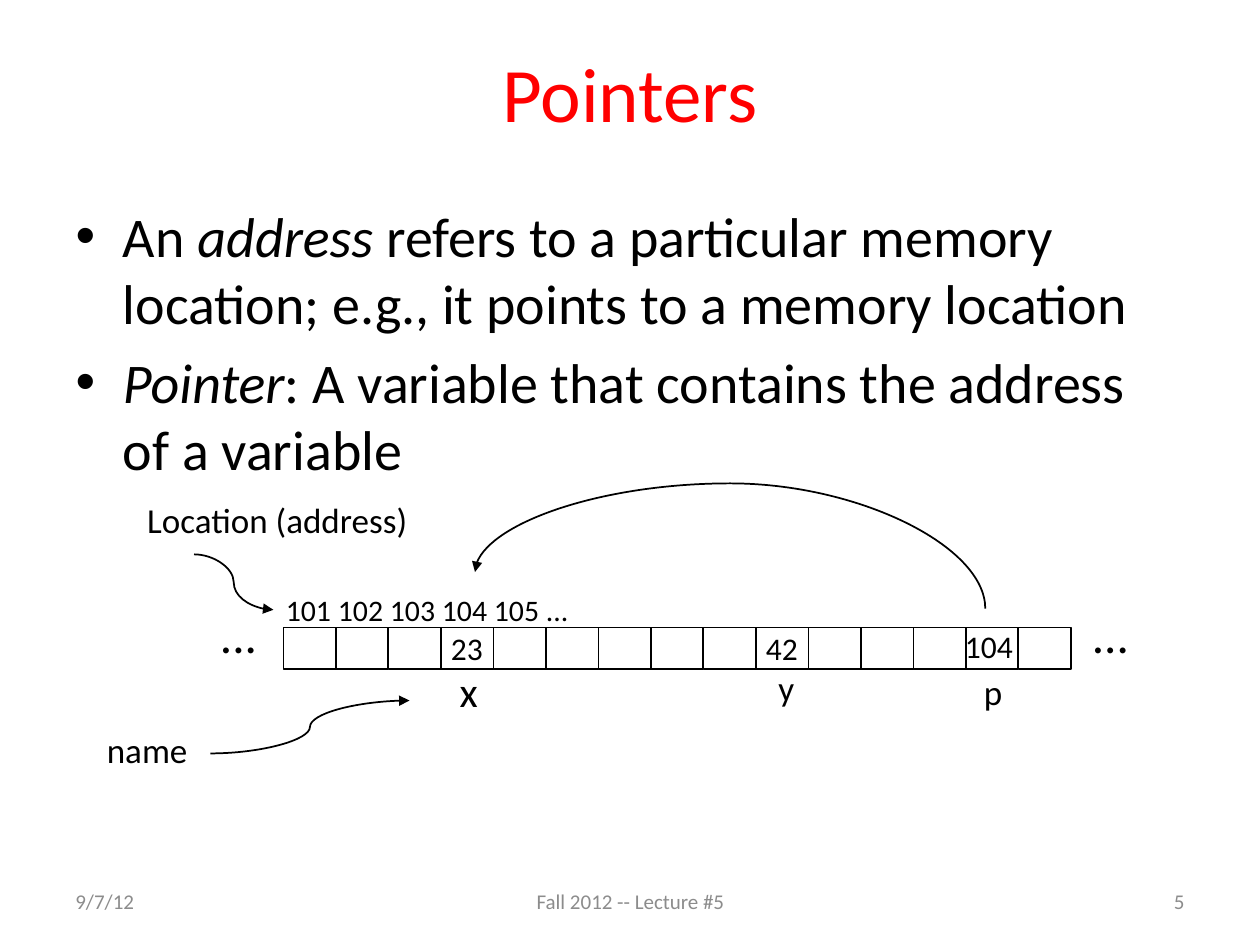
"""Build a lecture slide on pointers, with a row of memory cells."""
from dataclasses import dataclass

from lxml import etree
from pptx import Presentation
from pptx import util as u
from pptx.dml.color import RGBColor
from pptx.enum import shapes, text
from pptx.oxml import ns

BLACK = RGBColor(0x00, 0x00, 0x00)
RED = RGBColor(0xFF, 0x00, 0x00)
GRAY = RGBColor(0x8C, 0x8C, 0x8C)
FONT = "Calibri"
CELL_COUNT = 15
ROW_LEFT, ROW_RIGHT, ROW_TOP, CELL_HEIGHT = 2.25, 8.5, 4.98, 0.33


@dataclass
class Label:
    wording: str
    left: float
    top: float
    width: float
    height: float
    size: float = 20


@dataclass
class Footer:
    wording: str
    left: float
    width: float
    align: text.PP_ALIGN


@dataclass
class Arrow:
    begin: tuple[float, float]
    end: tuple[float, float]
    rotation: int = 0
    bend: float = 0.5


BULLETS = [
    [("An ", False), ("address ", True),
     ("refers to a particular memory location; e.g., it points to a memory location", False)],
    [("Pointer", True), (": A variable that contains the address of a variable", False)],
]
FOOTERS = [
    Footer("9/7/12", 0.5, 2.33, text.PP_ALIGN.LEFT),
    Footer("Fall 2012 -- Lecture #5", 3.42, 3.17, text.PP_ALIGN.CENTER),
    Footer("5", 7.17, 2.33, text.PP_ALIGN.RIGHT),
]
LABELS = [
    Label("23", 3.48, 4.94, 0.48, 0.4, 18),
    Label("42", 5.98, 4.94, 0.48, 0.4, 18),
    Label("104", 7.56, 4.93, 0.62, 0.4, 18),
    Label(" ...", 8.48, 4.75, 0.62, 0.57, 28),
    Label(" ...", 1.56, 4.75, 0.62, 0.57, 28),
    Label("101 102 103 104 105 ...", 2.17, 4.65, 2.47, 0.39, 17),
    Label("x", 3.55, 5.23, 0.37, 0.5, 24),
    Label("y", 6.08, 5.24, 0.34, 0.43),
    Label("p", 7.71, 5.27, 0.36, 0.43),
    Label("Location (address)", 1.07, 3.91, 2.5, 0.43),
    Label("name", 0.75, 5.73, 0.9, 0.43),
]
ARROWS = [
    Arrow((1.54, 4.4), (2.17, 4.84)),
    Arrow((1.67, 5.98), (3.25, 5.56)),
    Arrow((5.94, 2.66), (5.65, 6.71), rotation=90, bend=3.425),
]


def place(shape, left: float, top: float, width: float, height: float) -> None:
    shape.left, shape.top = u.Inches(left), u.Inches(top)
    shape.width, shape.height = u.Inches(width), u.Inches(height)


def style(font, size: float, color: RGBColor) -> None:
    font.name, font.size = FONT, u.Pt(size)
    font.color.rgb = color


def fill_title(title) -> None:
    place(title, 0.5, 0.1, 9, 1.25)
    title.text_frame.text = "Pointers"
    style(title.text_frame.paragraphs[0].runs[0].font, 44, RED)


def fill_body(body) -> None:
    place(body, 0.5, 1.55, 9, 4.95)
    frame = body.text_frame
    for index, bullet in enumerate(BULLETS):
        paragraph = frame.add_paragraph() if index else frame.paragraphs[0]
        for wording, italic in bullet:
            run = paragraph.add_run()
            run.text = wording
            run.font.italic = italic
            style(run.font, 32, BLACK)


def draw_footer(slide, footer: Footer) -> None:
    frame = slide.shapes.add_textbox(
        u.Inches(footer.left), u.Inches(6.95), u.Inches(footer.width), u.Inches(0.4)).text_frame
    frame.word_wrap = True
    frame.vertical_anchor = text.MSO_ANCHOR.MIDDLE
    frame.text = footer.wording
    frame.paragraphs[0].alignment = footer.align
    style(frame.paragraphs[0].runs[0].font, 12, GRAY)


def draw_cell(slide, index: int) -> None:
    width = (ROW_RIGHT - ROW_LEFT) / CELL_COUNT
    cell = slide.shapes.add_shape(
        shapes.MSO_SHAPE.RECTANGLE, u.Inches(ROW_LEFT + index * width), u.Inches(ROW_TOP),
        u.Inches(width), u.Inches(CELL_HEIGHT))
    cell.shadow.inherit = False
    cell.fill.background()
    cell.line.color.rgb = BLACK
    cell.line.width = u.Pt(1)


def draw_label(slide, label: Label) -> None:
    frame = slide.shapes.add_textbox(
        u.Inches(label.left), u.Inches(label.top),
        u.Inches(label.width), u.Inches(label.height)).text_frame
    frame.word_wrap = False
    frame.auto_size = text.MSO_AUTO_SIZE.SHAPE_TO_FIT_TEXT
    frame.text = label.wording
    style(frame.paragraphs[0].runs[0].font, label.size, BLACK)


def draw_arrow(slide, arrow: Arrow) -> None:
    points = [u.Inches(value) for value in (*arrow.begin, *arrow.end)]
    curve = slide.shapes.add_connector(shapes.MSO_CONNECTOR.CURVE, *points)
    curve.line.color.rgb = BLACK
    curve.line.width = u.Pt(1)
    properties = curve._element.spPr
    if arrow.rotation:
        properties.find(ns.qn("a:xfrm")).set("rot", str(arrow.rotation * 60000))
    adjustments = properties.find(ns.qn("a:prstGeom")).get_or_add_avLst()
    etree.SubElement(adjustments, ns.qn("a:gd"), name="adj1",
                     fmla=f"val {round(arrow.bend * 100000)}")
    etree.SubElement(properties.find(ns.qn("a:ln")), ns.qn("a:tailEnd"), type="triangle")
    etree.SubElement(properties, ns.qn("a:effectLst"))


def main() -> None:
    deck = Presentation()
    deck.slide_width, deck.slide_height = u.Inches(10), u.Inches(7.5)
    slide = deck.slides.add_slide(deck.slide_layouts[1])
    fill_title(slide.shapes.title)
    fill_body(slide.placeholders[1])
    for footer in FOOTERS:
        draw_footer(slide, footer)
    for index in range(CELL_COUNT):
        draw_cell(slide, index)
    for label in LABELS:
        draw_label(slide, label)
    for arrow in ARROWS:
        draw_arrow(slide, arrow)
    deck.save("out.pptx")


if __name__ == "__main__":
    main()
